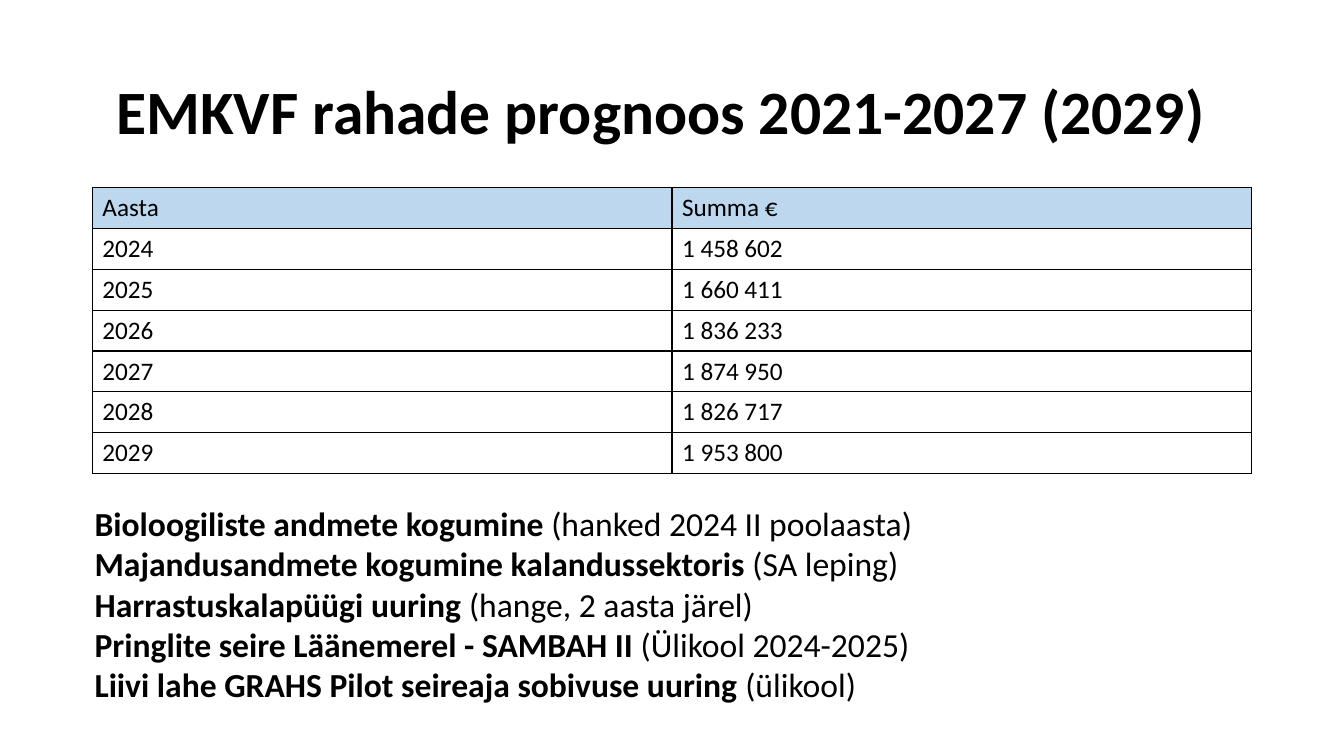
import pptx
import pptx.util
import pptx.dml.color
import pptx.enum.text
import pptx.oxml
import pptx.oxml.ns

Pt = pptx.util.Pt

TITLE = "EMKVF rahade prognoos 2021-2027 (2029)"
FORECAST = [
    ("Aasta", "Summa €"),
    ("2024", "1 458 602"),
    ("2025", "1 660 411"),
    ("2026", "1 836 233"),
    ("2027", "1 874 950"),
    ("2028", "1 826 717"),
    ("2029", "1 953 800"),
]
STUDIES = [
    ("Bioloogiliste andmete kogumine", "(hanked 2024 II poolaasta)"),
    ("Majandusandmete kogumine kalandussektoris", "(SA leping)"),
    ("Harrastuskalapüügi uuring", "(hange, 2 aasta järel)"),
    ("Pringlite seire Läänemerel - SAMBAH II", "(Ülikool 2024-2025)"),
    ("Liivi lahe GRAHS Pilot seireaja sobivuse uuring", "(ülikool)"),
]
COLORS = {"text": "000000", "header": "BDD7EE", "border": "000000"}
FONT = "Calibri"
LEFT, WIDTH = 66, 828
TABLE_TOP, ROW_HEIGHT = 133.9, 29.2


def format_run(run, size, bold=False):
    run.font.name = FONT
    run.font.size = Pt(size)
    run.font.bold = bold
    run.font.color.rgb = pptx.dml.color.RGBColor.from_string(COLORS["text"])


def add_borders(cell):
    properties = cell._tc.get_or_add_tcPr()
    for position, side in enumerate(("lnL", "lnR", "lnT", "lnB")):
        line = pptx.oxml.parse_xml(
            f'<a:{side} {pptx.oxml.ns.nsdecls("a")} w="{Pt(1)}"><a:solidFill>'
            f'<a:srgbClr val="{COLORS["border"]}"/></a:solidFill></a:{side}>'
        )
        properties.insert(position, line)


def add_title(slide):
    title = slide.shapes.title
    title.left, title.top, title.width, title.height = Pt(LEFT), Pt(29.5), Pt(WIDTH), Pt(104.4)
    frame = title.text_frame
    frame.text = TITLE
    frame.vertical_anchor = pptx.enum.text.MSO_ANCHOR.MIDDLE
    frame.margin_left = Pt(17.2)
    paragraph = frame.paragraphs[0]
    paragraph.alignment = pptx.enum.text.PP_ALIGN.LEFT
    paragraph.line_spacing = 0.9
    format_run(paragraph.runs[0], 44, True)


def add_forecast(slide):
    rows, columns = len(FORECAST), len(FORECAST[0])
    table = slide.shapes.add_table(
        rows, columns, Pt(LEFT), Pt(TABLE_TOP), Pt(WIDTH), Pt(ROW_HEIGHT * rows)
    ).table
    table.first_row = False
    table.horz_banding = False
    for row_index, values in enumerate(FORECAST):
        table.rows[row_index].height = Pt(ROW_HEIGHT)
        for column_index, value in enumerate(values):
            cell = table.cell(row_index, column_index)
            cell.text_frame.text = value
            format_run(cell.text_frame.paragraphs[0].runs[0], 18)
            if row_index == 0:
                cell.fill.solid()
                cell.fill.fore_color.rgb = pptx.dml.color.RGBColor.from_string(COLORS["header"])
            else:
                cell.fill.background()
            add_borders(cell)


def add_studies(slide):
    frame = slide.shapes.add_textbox(Pt(60.5), Pt(355.7), Pt(874), Pt(174.2)).text_frame
    frame.word_wrap = True
    frame.auto_size = pptx.enum.text.MSO_AUTO_SIZE.SHAPE_TO_FIT_TEXT
    for index, (study, detail) in enumerate(STUDIES):
        paragraph = frame.add_paragraph() if index else frame.paragraphs[0]
        for text, bold in ((study + " ", True), (detail, False)):
            run = paragraph.add_run()
            run.text = text
            format_run(run, 24, bold)


def main():
    presentation = pptx.Presentation()
    presentation.slide_width, presentation.slide_height = Pt(960), Pt(540)
    slide = presentation.slides.add_slide(presentation.slide_layouts.get_by_name("Title Only"))
    add_forecast(slide)
    add_title(slide)
    add_studies(slide)
    presentation.save("out.pptx")


if __name__ == "__main__":
    main()
